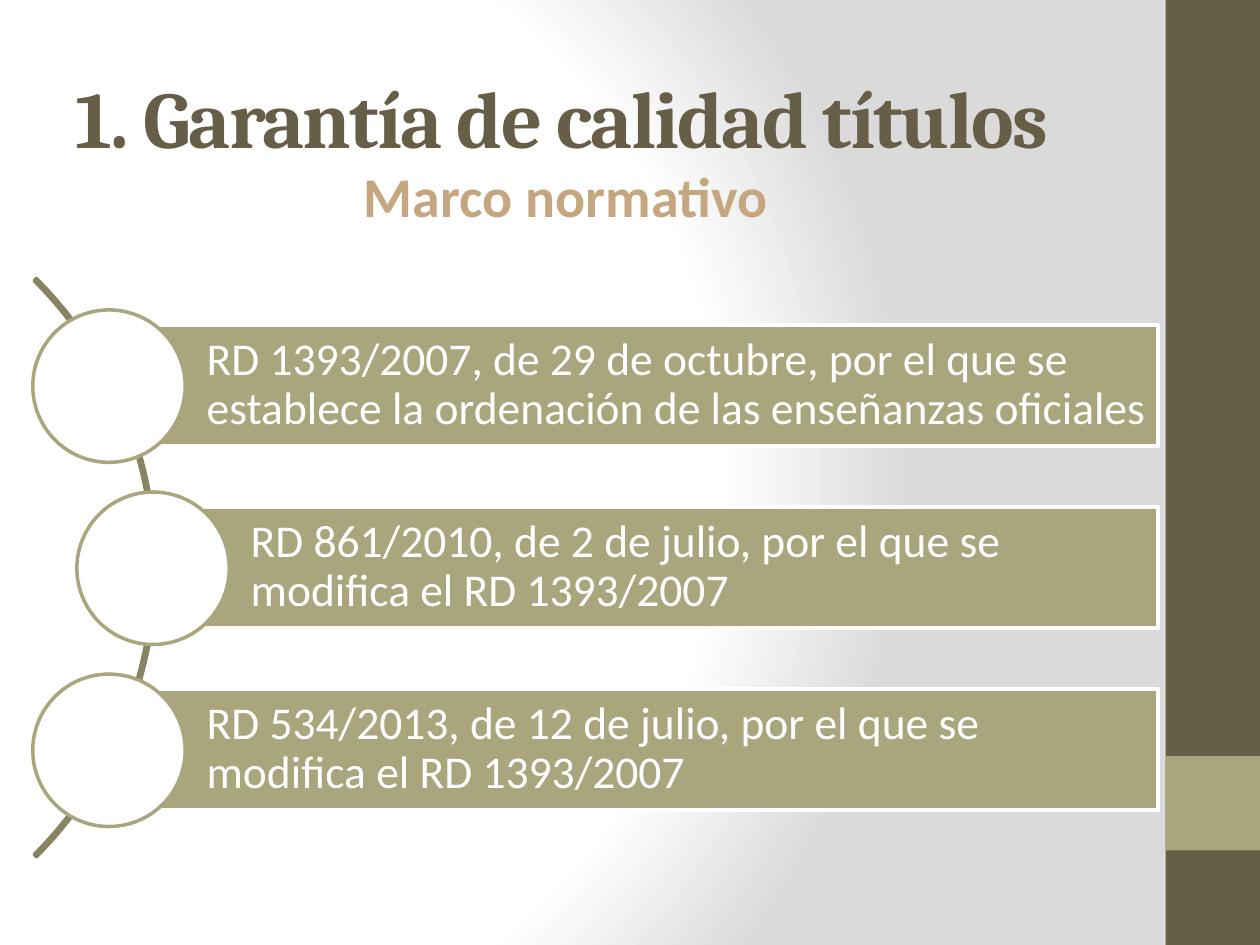
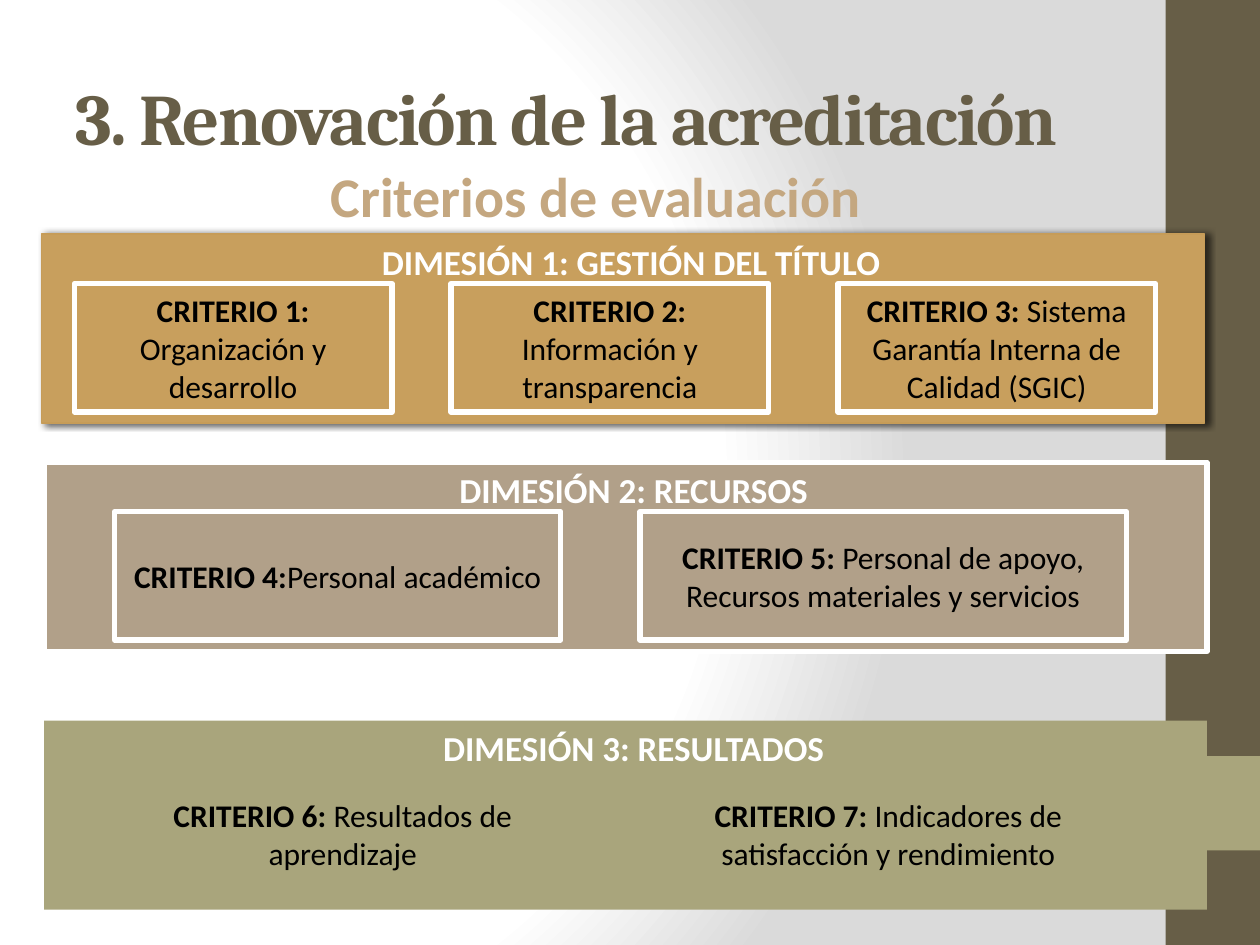
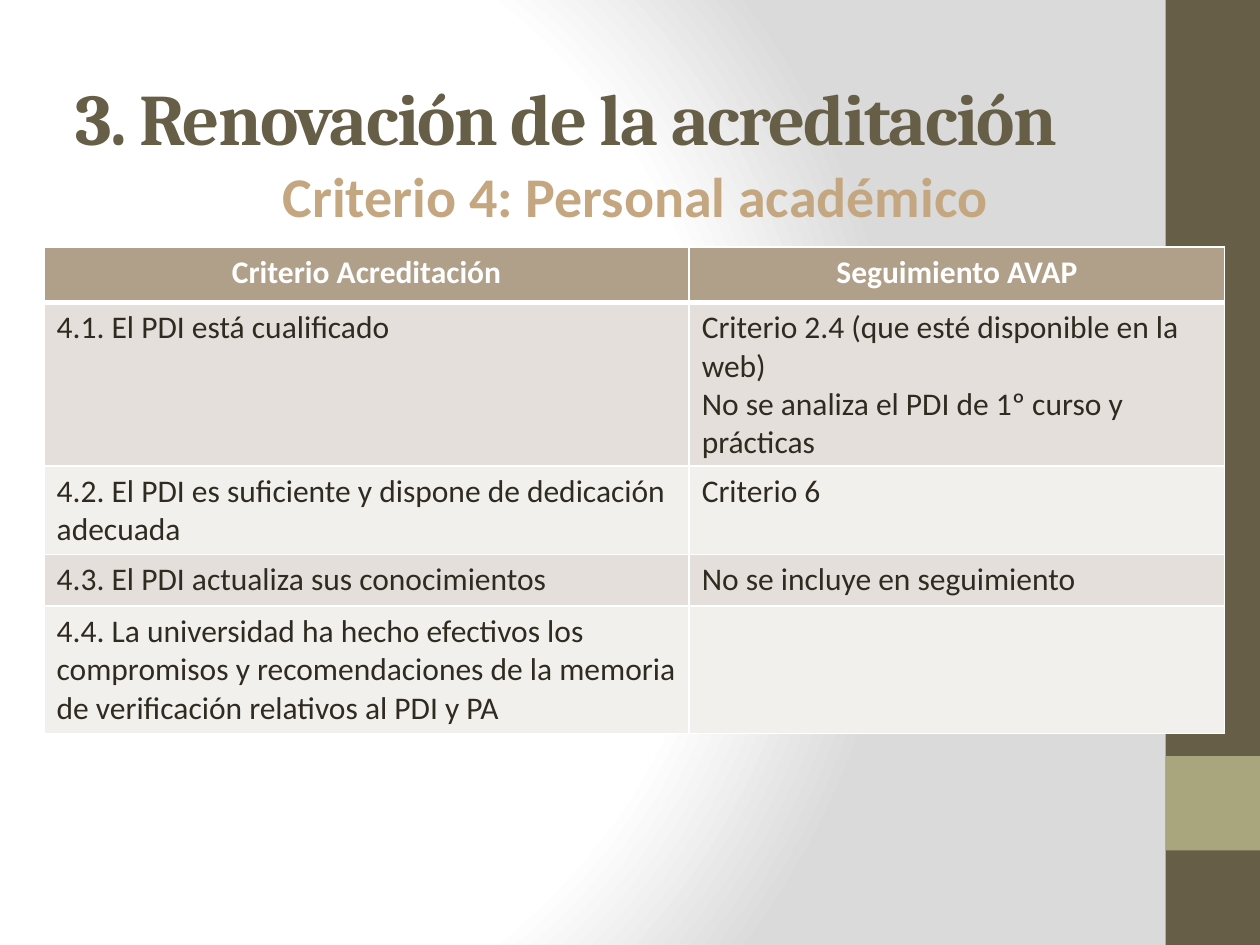
from pptx import Presentation
from pptx.dml.color import RGBColor
from pptx.enum.shapes import MSO_SHAPE as Shape
from pptx.enum.text import MSO_ANCHOR as Anchor, PP_ALIGN as Align
from pptx.oxml import parse_xml
from pptx.oxml.ns import nsdecls, qn
from pptx.util import Inches, Pt

COLORS = {
    "white": "FFFFFF", "black": "000000", "gray": "DADADA", "ink": "2F2B20",
    "brown": "675E47", "sage": "A9A57C", "moss": "878463", "tan": "C4A780",
    "gold": "C89F5D", "gold_edge": "C69C58", "taupe": "B1A089",
    "row_dark": "E4DFDA", "row_light": "F2F0ED",
}
TITLE_FONT, BODY_FONT = "Cambria", "Calibri"

BACKGROUND = f"""<p:bg {nsdecls("p", "a")}><p:bgPr><a:gradFill rotWithShape="1"><a:gsLst>
<a:gs pos="0"><a:srgbClr val="{COLORS["white"]}"/></a:gs>
<a:gs pos="75000"><a:srgbClr val="{COLORS["white"]}"/></a:gs>
<a:gs pos="100000"><a:srgbClr val="{COLORS["gray"]}"/></a:gs></a:gsLst>
<a:path path="circle"><a:fillToRect l="20000" t="50000" r="100000" b="50000"/></a:path>
</a:gradFill><a:effectLst/></p:bgPr></p:bg>"""


def rgb(name):
    return RGBColor.from_string(COLORS[name])


class Deck:
    """Holds the shared style and the slide being built."""

    def __init__(self):
        self.file = Presentation()
        self.file.slide_width, self.file.slide_height = Inches(10), Inches(7.5)
        self.page = None

    def new_page(self, title, title_size, subtitle, subtitle_left, subtitle_width):
        self.page = self.file.slides.add_slide(self.file.slide_layouts[6])
        self.page._element.cSld.insert(0, parse_xml(BACKGROUND))
        # Side band with its accent square
        self.shape(Shape.RECTANGLE, 9.25, 0, 0.75, 7.5, "brown")
        self.shape(Shape.RECTANGLE, 9.25, 6, 0.75, 0.75, "sage")
        # Title and subtitle
        frame = self.text_box(0.5, 0.3, 8.33, 1.25, Anchor.MIDDLE)
        span = self.span(frame.paragraphs[0], title, title_size, "brown", True, TITLE_FONT)
        span._r.get_or_add_rPr().set("spc", "-100")
        frame = self.text_box(subtitle_left, 1.23, subtitle_width, 0.64, Anchor.TOP)
        frame.paragraphs[0].alignment = Align.CENTER
        self.span(frame.paragraphs[0], subtitle, 32, "tan", True)

    def span(self, para, text, size, color, bold=False, font=BODY_FONT):
        span = para.add_run()
        span.text = text
        span.font.name, span.font.size, span.font.bold = font, Pt(size), bold
        span.font.color.rgb = rgb(color)
        return span

    def text_box(self, left, top, width, height, anchor):
        box = self.page.shapes.add_textbox(*map(Inches, (left, top, width, height)))
        box.text_frame.word_wrap = True
        box.text_frame.vertical_anchor = anchor
        return box.text_frame

    def shape(self, kind, left, top, width, height, fill=None, line=None, line_width=1):
        box = self.page.shapes.add_shape(kind, *map(Inches, (left, top, width, height)))
        box.shadow.inherit = False
        if fill:
            box.fill.solid()
            box.fill.fore_color.rgb = rgb(fill)
        else:
            box.fill.background()
        if line:
            box.line.color.rgb = rgb(line)
            box.line.width = Pt(line_width)
        else:
            box.line.fill.background()
        return box

    def shadow(self, box):
        effects = box._element.spPr.find(qn("a:effectLst"))
        effects.append(parse_xml(
            f'<a:outerShdw {nsdecls("a")} blurRad="{Pt(4)}" dist="{Pt(2)}" dir="0" rotWithShape="0">'
            f'<a:srgbClr val="{COLORS["black"]}"><a:alpha val="60000"/></a:srgbClr></a:outerShdw>'))

    def rule_bar(self, left, top, text):
        """A regulation bar with the circle at its left end."""
        bar = self.shape(Shape.RECTANGLE, left, top, 9.19 - left, 0.96, "sage", "white", 2)
        frame = bar.text_frame
        frame.word_wrap, frame.vertical_anchor = True, Anchor.MIDDLE
        frame.margin_left = Inches(0.77)
        frame.margin_top = frame.margin_right = frame.margin_bottom = Inches(0.07)
        para = frame.paragraphs[0]
        para.alignment, para.line_spacing = Align.LEFT, 0.9
        self.span(para, text, 26, "white")
        self.shape(Shape.OVAL, left - 0.61, top - 0.12, 1.21, 1.21, "white", "sage", 2)

    def dimension(self, left, top, text, fill, line, line_width):
        panel = self.shape(Shape.RECTANGLE, left, top, 9.23, 1.5, fill, line, line_width)
        panel.text_frame.word_wrap, panel.text_frame.vertical_anchor = True, Anchor.TOP
        para = panel.text_frame.paragraphs[0]
        para.alignment = Align.CENTER
        indents = para._p.get_or_add_pPr()
        indents.set("marL", str(Inches(0.38)))
        indents.set("indent", str(Inches(-0.25)))
        self.span(para, text, 20, "white", True)
        return panel

    def criterion(self, left, top, width, label, text, fill, line):
        box = self.shape(Shape.FLOWCHART_PROCESS, left, top, width, 1.02, fill, line, 3)
        box.text_frame.word_wrap, box.text_frame.vertical_anchor = True, Anchor.MIDDLE
        para = box.text_frame.paragraphs[0]
        para.alignment = Align.CENTER
        self.span(para, label, 18, "black", True)
        self.span(para, text, 18, "black")

    def cell(self, cell, lines, fill, header):
        borders = cell._tc.get_or_add_tcPr()
        for side in "LRTB":
            width = Pt(3 if header and side == "B" else 1)
            borders.append(parse_xml(
                f'<a:ln{side} {nsdecls("a")} w="{width}"><a:solidFill>'
                f'<a:srgbClr val="{COLORS["white"]}"/></a:solidFill></a:ln{side}>'))
        cell.fill.solid()
        cell.fill.fore_color.rgb = rgb(fill)
        for number, text in enumerate(lines):
            frame = cell.text_frame
            para = frame.add_paragraph() if number else frame.paragraphs[0]
            para.alignment = Align.CENTER if header else Align.LEFT
            self.span(para, text, 18, "white" if header else "ink", header)

    def table(self, left, top, widths, heights, rows):
        size = map(Inches, (left, top, sum(widths), sum(heights)))
        table = self.page.shapes.add_table(len(rows), len(widths), *size).table
        for column, width in zip(table.columns, widths):
            column.width = Inches(width)
        for index, (height, row) in enumerate(zip(heights, rows)):
            table.rows[index].height = Inches(height)
            fill = "taupe" if index == 0 else ("row_light", "row_dark")[index % 2]
            for column, lines in enumerate(row):
                self.cell(table.cell(index, column), lines, fill, index == 0)


def regulations(deck):
    deck.new_page("1. Garantía de calidad títulos", 46, "Marco normativo", 1.69, 5.6)
    arc = deck.shape(Shape.BLOCK_ARC, -5.25, 1.26, 6.49, 6.49, None, "moss", 2)
    # Start and end angle in units of 100000, then the thickness ratio
    for index, value in enumerate((189, 27, 0.4 / 100)):
        arc.adjustments[index] = value
    rules = [
        (0.87, "RD 1393/2007, de 29 de octubre, por el que se establece la ordenación "
               "de las enseñanzas oficiales"),
        (1.22, "RD 861/2010, de 2 de julio, por el que se modifica el RD 1393/2007"),
        (0.87, "RD 534/2013, de 12 de julio, por el que se modifica el RD 1393/2007"),
    ]
    for index, (left, text) in enumerate(rules):
        deck.rule_bar(left, 2.58 + 2.89 / 2 * index, text)


def evaluation_criteria(deck):
    deck.new_page("3. Renovación de la acreditación", 41.4, "Criterios de evaluación", 1.93, 5.6)
    # Panel: left, top, heading, fill, edge, edge width, criterion edge, criteria
    dimensions = [
        (0.33, 1.86, "DIMESIÓN 1: GESTIÓN DEL TÍTULO", "gold", "gold_edge", 1, "white", [
            (0.59, 2.52, "CRITERIO 1: ", "Organización y desarrollo"),
            (3.58, 2.52, "CRITERIO 2: ", "Información y transparencia"),
            (6.65, 2.52, "CRITERIO 3: ", "Sistema Garantía Interna de Calidad (SGIC)")]),
        (0.35, 3.67, "DIMESIÓN 2: RECURSOS", "taupe", "white", 3, "white", [
            (0.91, 3.54, "CRITERIO 4:", "Personal académico"),
            (5.08, 3.86, "CRITERIO 5: ", "Personal de apoyo, Recursos materiales y servicios")]),
        (0.35, 5.72, "DIMESIÓN 3: RESULTADOS", "sage", None, 0, None, [
            (0.91, 3.62, "CRITERIO 6: ", "Resultados de aprendizaje"),
            (5.16, 3.78, "CRITERIO 7: ", "Indicadores de satisfacción y rendimiento")]),
    ]
    for left, top, heading, fill, edge, edge_width, box_edge, criteria in dimensions:
        panel = deck.dimension(left, top, heading, fill, edge, edge_width)
        if fill == "gold":
            deck.shadow(panel)
        for box_left, width, label, text in criteria:
            deck.criterion(box_left, top + 0.39, width, label, text, fill, box_edge)


def academic_staff(deck):
    deck.new_page("3. Renovación de la acreditación", 41.4,
                  "Criterio 4: Personal académico", 0.83, 8.43)
    rows = [
        (["Criterio Acreditación"], ["Seguimiento AVAP"]),
        (["4.1. El PDI está cualificado"],
         ["Criterio 2.4 (que esté disponible en la web)",
          "No se analiza el PDI de 1º curso y prácticas"]),
        (["4.2. El PDI es suficiente y dispone de dedicación adecuada"], ["Criterio 6"]),
        (["4.3. El PDI actualiza sus conocimientos"], ["No se incluye en seguimiento"]),
        (["4.4. La universidad ha hecho efectivos los compromisos y recomendaciones "
          "de la memoria de verificación relativos al PDI y PA"], []),
    ]
    deck.table(0.35, 1.96, (5.12, 4.25), (0.44, 1.3, 0.7, 0.41, 1.01), rows)


def main():
    deck = Deck()
    regulations(deck)
    evaluation_criteria(deck)
    academic_staff(deck)
    deck.file.save("out.pptx")


if __name__ == "__main__":
    main()
